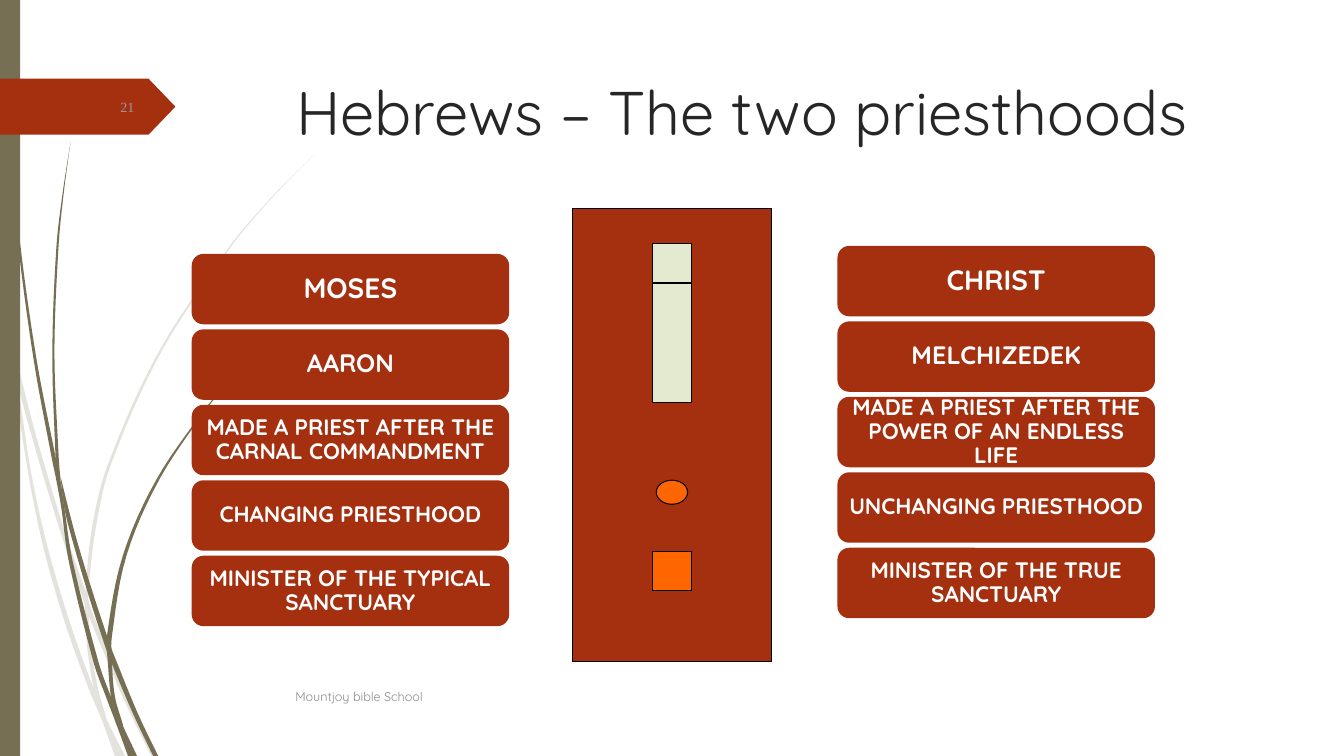
import pptx
import pptx.dml.color
import pptx.enum.shapes
import pptx.enum.text
import pptx.util

Pt = pptx.util.Pt
SHAPES = pptx.enum.shapes.MSO_SHAPE
ALIGN = pptx.enum.text.PP_ALIGN
ANCHOR = pptx.enum.text.MSO_ANCHOR

COLOURS = {
    "rust": "A53010", "olive": "766F54", "pale": "E4E2DD", "white": "FFFFFF",
    "black": "000000", "ink": "262626", "grey": "8C8C8C", "number": "9B9A98",
    "linen": "E3EACF", "orange": "FF6600",
}
TITLE = "Hebrews – The two priesthoods"
FOOTER = "Mountjoy bible School"
NUMBER = "21"
PRIESTHOODS = [
    {"left": 136.9, "top": 181.4, "rows": [
        "MOSES", "AARON", "MADE A PRIEST AFTER THE CARNAL COMMANDMENT",
        "CHANGING PRIESTHOOD", "MINISTER OF THE TYPICAL SANCTUARY"]},
    {"left": 598.2, "top": 175.7, "rows": [
        "CHRIST", "MELCHIZEDEK", "MADE A PRIEST AFTER THE POWER OF AN ENDLESS LIFE",
        "UNCHANGING PRIESTHOOD", "MINISTER OF THE TRUE SANCTUARY"]},
]
ROW_SIZES = [20, 18, 16, 16, 16]
ROW_WIDTH, ROW_HEIGHT, ROW_PITCH = 226.8, 50.3, 53.9

SANCTUARY_CENTRE = 480
SANCTUARY = [
    (SHAPES.RECTANGLE, 149, 142, 323.3, "rust"),
    (SHAPES.RECTANGLE, 202.2, 28, 85, "linen"),
    (SHAPES.RECTANGLE, 174.2, 28, 28, "linen"),
    (SHAPES.RECTANGLE, 393.8, 28, 28, "orange"),
    (SHAPES.OVAL, 343, 22.4, 17.2, "orange"),
]

# Each blade of grass lists (y, left edge, right edge).
BLADES = [
    ("pale", [(203, 0, 0), (252, 7.9, 8.6), (271, 10.1, 12.2), (338, 20.2, 22.3),
              (392.5, 31.4, 34.5), (446, 46.8, 50.4), (492, 63.4, 67),
              (514, 72.7, 76.3), (540, 82, 89.3)]),
    ("pale", [(248.4, 10.1, 10.1), (271, 12.2, 15.4), (312, 22.8, 26),
              (374.4, 41.4, 44.6), (425, 58.3, 62), (438, 62.6, 66.2),
              (500, 88.6, 92), (540, 108, 111.6)]),
    ("pale", [(110.2, 224.6, 224.6), (142, 193, 193.7), (175.7, 164.2, 165.4),
              (250.6, 113.8, 115.6), (332, 77, 79.2), (376, 65.9, 68.6),
              (420.5, 61.2, 63.4), (439, 60.8, 63.4), (465, 62.6, 65.5),
              (492, 67, 70), (514, 72.7, 76.3)]),
    ("olive", [(0, 2, 2.2), (79, 5, 5.8), (167.8, 12.2, 13.7), (255.6, 23.8, 25.9),
               (326, 36.7, 39.6), (343.4, 40.3, 43.2), (363.6, 43.9, 46.1),
               (400.3, 49, 51.8), (473.8, 67, 70.6), (497.5, 75.6, 79.2),
               (518.4, 83.5, 87.8), (540, 91.4, 97.9)]),
    ("olive", [(340, 43.2, 43.2), (363.6, 46.1, 49), (389, 52.6, 55.8),
               (425.5, 63.4, 67), (461, 74.9, 78.8), (472.3, 79.2, 83.2),
               (509, 94.7, 98.2), (540, 109.4, 113)]),
    ("olive", [(101.5, 50.4, 50.4), (139, 44.6, 45.4), (176.4, 40.3, 41.8),
               (251.3, 37.4, 38.9), (324, 39.6, 41.8), (343.4, 41, 43.2)]),
    ("olive", [(247.7, 187.2, 187.9), (269.3, 166, 166.7), (291.6, 146.9, 148),
               (342, 112, 114.1), (396.7, 87.8, 90.4), (455, 76.3, 79.9),
               (472.3, 77, 79.9), (497.5, 79.2, 82.1), (517.7, 83.2, 87.8)]),
]


def colour(name):
    """Return the named colour."""
    return pptx.dml.color.RGBColor.from_string(COLOURS[name])


def paint(shape, fill, line=None):
    """Give a shape a flat fill and an optional thin outline."""
    shape.shadow.inherit = False
    shape.fill.solid()
    shape.fill.fore_color.rgb = colour(fill)
    if line:
        shape.line.color.rgb = colour(line)
        shape.line.width = Pt(0.75)
    else:
        shape.line.fill.background()


def add_block(page, kind, left, top, width, height, fill, line=None):
    """Add a painted preset shape."""
    block = page.shapes.add_shape(kind, Pt(left), Pt(top), Pt(width), Pt(height))
    paint(block, fill, line)
    return block


def write(box, text, size, ink, font="Quicksand", bold=False, align=ALIGN.LEFT,
          anchor=ANCHOR.MIDDLE, spacing=None, inset=None):
    """Write one formatted paragraph in a box."""
    frame = box.text_frame
    frame.word_wrap = True
    frame.vertical_anchor = anchor
    if inset is not None:
        frame.margin_left = frame.margin_right = Pt(inset)
        frame.margin_top = frame.margin_bottom = Pt(inset)
    para = frame.paragraphs[0]
    para.alignment = align
    para.line_spacing = spacing
    span = para.add_run()
    span.text = text
    span.font.name = font
    span.font.size = Pt(size)
    span.font.bold = bold
    span.font.color.rgb = colour(ink)


def smooth(points, steps=6):
    """Return points along a smooth curve of x over y."""
    last = len(points) - 1
    slopes = []
    for index in range(last + 1):
        before, after = points[max(index - 1, 0)], points[min(index + 1, last)]
        slopes.append((after[0] - before[0]) / (after[1] - before[1]))
    curve = []
    for index in range(last):
        (x1, y1), (x2, y2) = points[index], points[index + 1]
        rise = y2 - y1
        for step in range(steps):
            t = step / steps
            x = ((2 * t**3 - 3 * t**2 + 1) * x1 + (3 * t**2 - 2 * t**3) * x2
                 + (t**3 - 2 * t**2 + t) * rise * slopes[index]
                 + (t**3 - t**2) * rise * slopes[index + 1])
            curve.append((x, y1 + t * rise))
    return curve + [points[-1]]


def add_blade(page, fill, ribs):
    """Draw a tapering blade between its two smooth edges."""
    left = smooth([(x, y) for y, x, _ in ribs])
    right = smooth([(x, y) for y, _, x in ribs])
    outline = [(Pt(x), Pt(y)) for x, y in left + right[::-1]]
    builder = page.shapes.build_freeform(*outline[0])
    builder.add_line_segments(outline[1:], close=True)
    paint(builder.convert_to_shape(), fill)


def add_text(page, left, top, width, height, text, **style):
    """Add a text box."""
    box = page.shapes.add_textbox(Pt(left), Pt(top), Pt(width), Pt(height))
    write(box, text, **style)


def main():
    """Build the slide and save it."""
    deck = pptx.Presentation()
    deck.slide_width, deck.slide_height = Pt(960), Pt(540)
    page = deck.slides.add_slide(deck.slide_layouts[6])
    for fill, ribs in BLADES:
        add_blade(page, fill, ribs)
    add_block(page, SHAPES.RECTANGLE, 0, 0, 14.4, 540, "olive")
    tag = add_block(page, SHAPES.PENTAGON, -0.7, 56.2, 126, 40, "rust")
    tag.adjustments[0] = 0.48
    add_text(page, 204.5, 49, 702, 73.4, TITLE, size=44, ink="ink", anchor=ANCHOR.TOP)
    for column in PRIESTHOODS:
        for index, (text, size) in enumerate(zip(column["rows"], ROW_SIZES)):
            row = add_block(page, SHAPES.ROUNDED_RECTANGLE, column["left"],
                            column["top"] + index * ROW_PITCH, ROW_WIDTH, ROW_HEIGHT, "rust")
            write(row, text, size=size, ink="white", bold=True, align=ALIGN.CENTER,
                  spacing=0.9, inset=size * 0.3)
    add_text(page, 203.8, 483, 600, 28.8, FOOTER, size=9, ink="grey")
    add_text(page, 41.8, 62, 61.2, 28.8, NUMBER, size=10, ink="number",
             font="Times New Roman", align=ALIGN.RIGHT)
    for kind, top, width, height, fill in SANCTUARY:
        add_block(page, kind, SANCTUARY_CENTRE - width / 2, top, width, height, fill, "black")
    deck.save("out.pptx")


if __name__ == "__main__":
    main()
